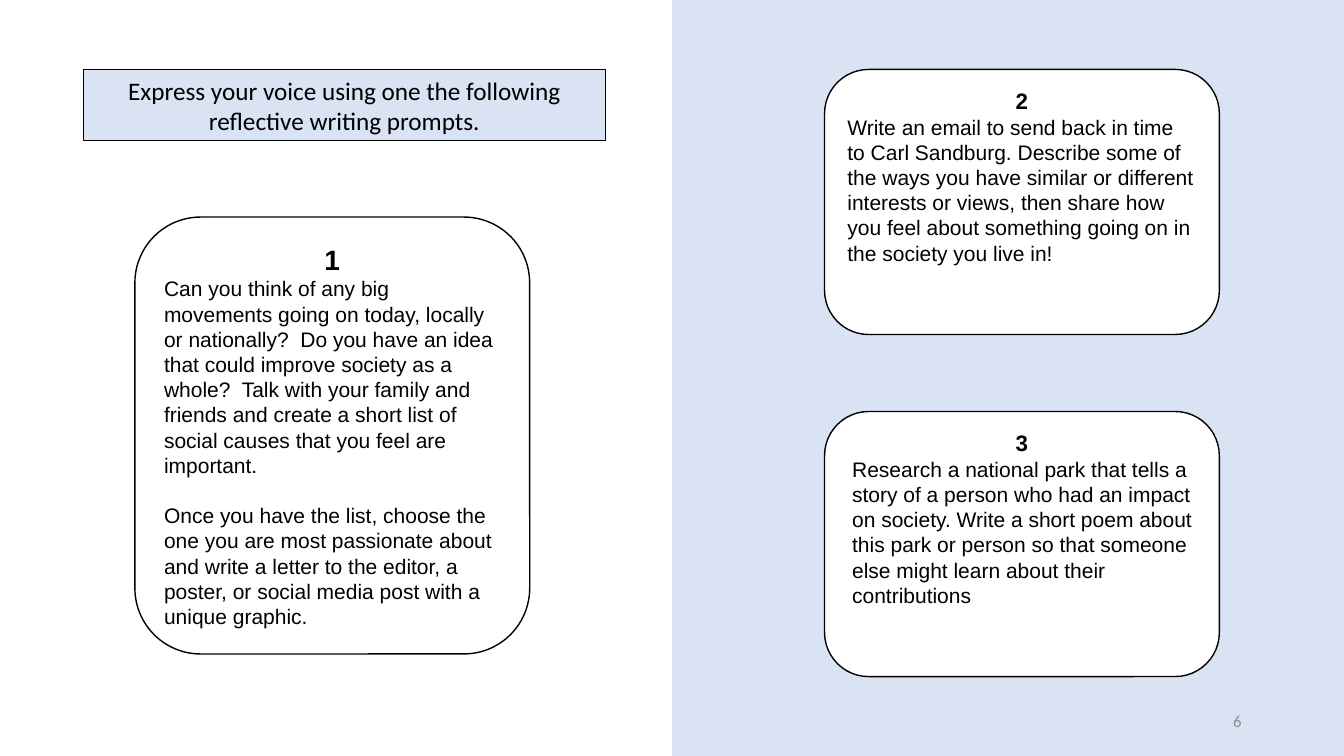
from pptx import Presentation
from pptx.dml.color import RGBColor
from pptx.enum.shapes import MSO_SHAPE
from pptx.enum.text import MSO_ANCHOR, PP_ALIGN
from pptx.util import Cm, Pt

RECTANGLE = MSO_SHAPE.RECTANGLE
ROUNDED = MSO_SHAPE.ROUNDED_RECTANGLE
TOP, MIDDLE = MSO_ANCHOR.TOP, MSO_ANCHOR.MIDDLE
LEFT, CENTER, RIGHT = PP_ALIGN.LEFT, PP_ALIGN.CENTER, PP_ALIGN.RIGHT

BLACK = RGBColor(0x00, 0x00, 0x00)
WHITE = RGBColor(0xFF, 0xFF, 0xFF)
PALE_BLUE = RGBColor(0xDA, 0xE3, 0xF3)
GRAY = RGBColor(0x8C, 0x8C, 0x8C)

PAGE_WIDTH, PAGE_HEIGHT = 33.87, 19.05
CARD_WIDTH = 9.95
RIGHT_CARD_LEFT, RIGHT_CARD_HEIGHT = 20.78, 6.68
BLANK_LINE = Pt(18)

MOVEMENTS = (
    "Can you think of any big movements going on today, locally or nationally?  "
    "Do you have an idea that could improve society as a whole?  Talk with your "
    "family and friends and create a short list of social causes that you feel "
    "are important."
)
LETTER = (
    "Once you have the list, choose the one you are most passionate about and "
    "write a letter to the editor, a poster, or social media post with a unique "
    "graphic."
)
EMAIL = (
    "Write an email to send back in time to Carl Sandburg. Describe some of the "
    "ways you have similar or different interests or views, then share how you "
    "feel about something going on in the society you live in!"
)
POEM = (
    "Research a national park that tells a story of a person who had an impact "
    "on society. Write a short poem about this park or person so that someone "
    "else might learn about their contributions"
)


def add_panel(page, kind, left, top, width, height, fill=None, line_width=None):
    """Add a preset shape; without a line width it has no outline."""
    panel = page.shapes.add_shape(kind, Cm(left), Cm(top), Cm(width), Cm(height))
    panel.shadow.inherit = False
    if fill is None:
        panel.fill.background()
    else:
        panel.fill.solid()
        panel.fill.fore_color.rgb = fill
    if line_width is None:
        panel.line.fill.background()
    else:
        panel.line.color.rgb = BLACK
        panel.line.width = Pt(line_width)
    return panel


def write_paragraph(para, text, size, align=LEFT, font="Arial", color=BLACK, bold=False):
    para.text = text
    para.alignment = align
    for span in para.runs:
        span.font.name = font
        span.font.size = Pt(size)
        span.font.bold = bold
        span.font.color.rgb = color


def add_prompt_card(page, left, top, height, number, number_size, prompts,
                    fill=None, anchor=TOP, indent=0):
    """Add a rounded card with a centred number above its prompt paragraphs."""
    card = add_panel(page, ROUNDED, left, top, CARD_WIDTH, height, fill, 1)
    frame = card.text_frame
    frame.word_wrap = True
    frame.vertical_anchor = anchor
    write_paragraph(frame.paragraphs[0], number, number_size, CENTER, bold=True)
    for index, prompt in enumerate(prompts):
        para = frame.add_paragraph()
        write_paragraph(para, prompt, 15)
        if index:
            para.space_before = BLANK_LINE
        if indent:
            para._p.get_or_add_pPr().set("marL", str(Cm(indent)))


def add_heading(page):
    heading = add_panel(page, RECTANGLE, 2.1, 1.75, 13.16, 1.8, PALE_BLUE, 0.75)
    frame = heading.text_frame
    frame.word_wrap = True
    frame.vertical_anchor = MIDDLE
    write_paragraph(
        frame.paragraphs[0],
        "Express your voice using one the following reflective writing prompts.",
        18, CENTER, "Calibri")


def add_page_number(page):
    box = page.shapes.add_textbox(Cm(23.92), Cm(17.66), Cm(7.62), Cm(1.01))
    frame = box.text_frame
    frame.word_wrap = True
    frame.vertical_anchor = MIDDLE
    write_paragraph(frame.paragraphs[0], "6", 12, RIGHT, "Calibri", GRAY)


def main():
    deck = Presentation()
    deck.slide_width, deck.slide_height = Cm(PAGE_WIDTH), Cm(PAGE_HEIGHT)
    page = deck.slides.add_slide(deck.slide_layouts[6])

    add_heading(page)
    half = PAGE_WIDTH / 2
    add_panel(page, RECTANGLE, half, 0, half, PAGE_HEIGHT, PALE_BLUE)
    add_prompt_card(page, 3.4, 5.47, 11.01, "1", 20, [MOVEMENTS, LETTER], anchor=MIDDLE)
    add_prompt_card(page, RIGHT_CARD_LEFT, 1.75, RIGHT_CARD_HEIGHT, "2", 16, [EMAIL], WHITE)
    add_prompt_card(page, RIGHT_CARD_LEFT, 10.37, RIGHT_CARD_HEIGHT, "3", 16, [POEM], WHITE,
                    indent=0.12)
    add_page_number(page)

    deck.save("out.pptx")


if __name__ == "__main__":
    main()
